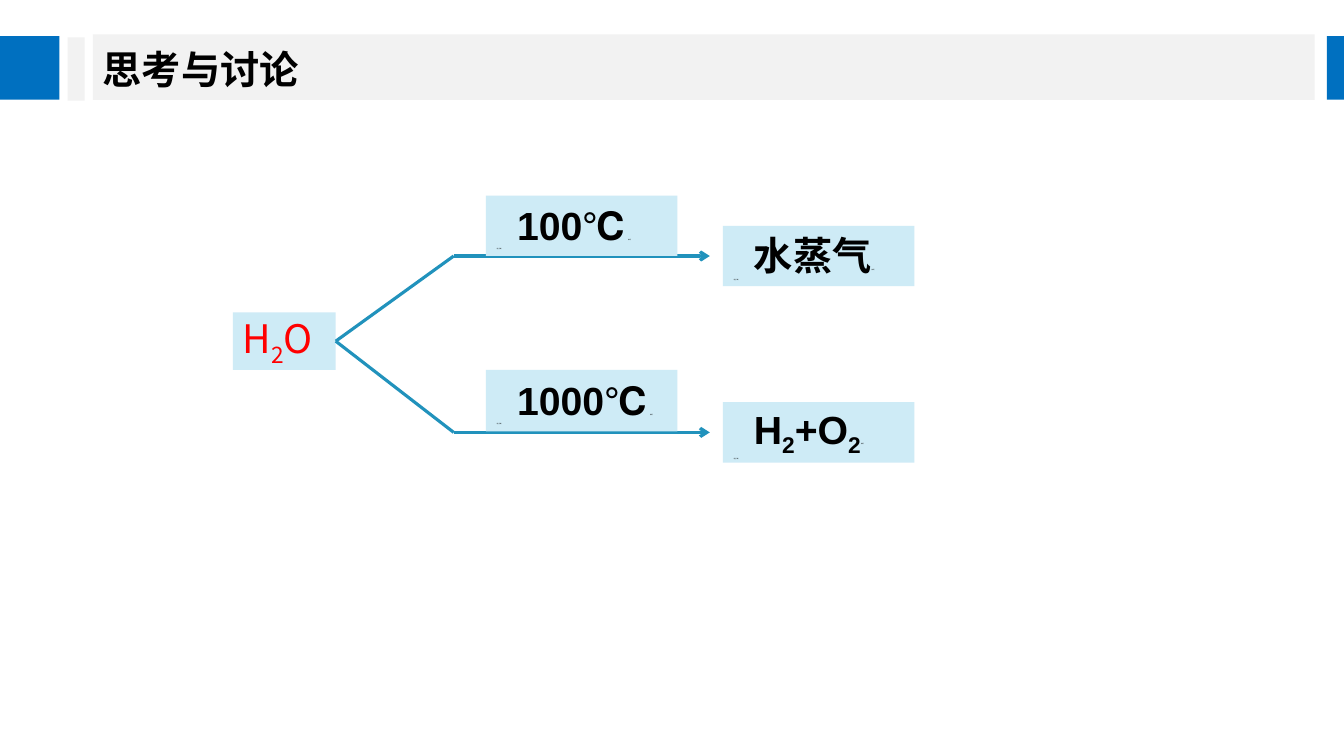
from pptx import Presentation
from pptx import util as u
from pptx.dml.color import RGBColor
from pptx.enum import shapes, text
from pptx.oxml import ns
from lxml import etree

COLORS = {"band": "F2F2F2", "accent": "0070C0", "box": "CEEBF6",
          "arrow": "2192BC", "ink": "000000", "formula": "FF0000"}
CJK = "Noto Sans CJK SC"
MAIN = {"size": u.Pt(28), "bold": True, "name": "Arial"}
CHINESE = {**MAIN, "name": CJK}
TITLE = {**MAIN, "name": "Times New Roman"}
FORMULA = {"size": u.Pt(28), "bold": False, "name": CJK}
TINY = {"size": u.Pt(1), "bold": False, "name": "Times New Roman"}


def color(name):
    return RGBColor.from_string(COLORS[name])


def add_run(paragraph, wording, style, ink="ink", subscript=False):
    run = paragraph.add_run()
    run.text = wording
    for attribute, value in style.items():
        setattr(run.font, attribute, value)
    run.font.color.rgb = color(ink)
    properties = run.font._element
    etree.SubElement(properties, ns.qn("a:ea")).set("typeface", CJK)
    if subscript:
        properties.set("baseline", "-25000")


def add_formula(paragraph, wording, style, ink="ink"):
    for index, part in enumerate(wording.split("_")):
        if index:
            add_run(paragraph, part[0], style, ink, True)
            part = part[1:]
        if part:
            add_run(paragraph, part, style, ink)


def add_box(slide, place, fill):
    shape = slide.shapes.add_shape(shapes.MSO_SHAPE.RECTANGLE, *map(u.Inches, place))
    shape.shadow.inherit = False
    shape.fill.solid()
    shape.fill.fore_color.rgb = color(fill)
    shape.line.fill.background()
    shape.text_frame.word_wrap = True
    shape.text_frame.vertical_anchor = text.MSO_ANCHOR.MIDDLE
    shape.text_frame.paragraphs[0].alignment = text.PP_ALIGN.LEFT
    return shape


def add_label(slide, place, wording, style):
    frame = add_box(slide, place, "box").text_frame
    first = frame.paragraphs[0]
    first._p.get_or_add_pPr().set("indent", str(u.Inches(0.21)))
    add_formula(first, wording, style)
    add_run(first, " 微观", TINY)
    second = frame.add_paragraph()
    second.alignment = text.PP_ALIGN.LEFT
    add_run(second, "（粒子数）", TINY)


def add_line(slide, start, end, source=None, arrow=False):
    line = slide.shapes.add_connector(shapes.MSO_CONNECTOR.STRAIGHT,
                                      *map(u.Inches, start + end))
    line.line.color.rgb = color("arrow")
    line.line.width = u.Pt(2.25)
    if source is not None:
        line.begin_connect(source, 3)
    if arrow:
        etree.SubElement(line.line._get_or_add_ln(), ns.qn("a:tailEnd")).set("type", "arrow")
    etree.SubElement(line._element.spPr, ns.qn("a:effectLst"))


def add_title(slide, wording):
    title = slide.shapes.title
    place = {"left": 0.92, "top": 0.17, "width": 6.95, "height": 0.81}
    for attribute, value in place.items():
        setattr(title, attribute, u.Inches(value))
    slide.shapes._spTree.append(title._element)
    frame = title.text_frame
    frame.vertical_anchor = text.MSO_ANCHOR.TOP
    frame.auto_size = text.MSO_AUTO_SIZE.NONE
    paragraph = frame.paragraphs[0]
    paragraph.alignment = text.PP_ALIGN.LEFT
    paragraph.line_spacing = 1.5
    add_run(paragraph, wording, TITLE)


def main():
    presentation = Presentation()
    presentation.slide_width = u.Inches(13.33)
    presentation.slide_height = u.Inches(7.5)
    slide = presentation.slides.add_slide(presentation.slide_layouts[5])

    add_box(slide, (0.92, 0.34, 12.12, 0.65), "band")
    add_title(slide, "思考与讨论")
    add_box(slide, (0, 0.36, 0.59, 0.63), "accent")
    add_box(slide, (0.67, 0.37, 0.17, 0.63), "band")
    add_box(slide, (13.16, 0.36, 0.17, 0.63), "accent")

    water = add_box(slide, (2.31, 3.1, 1.02, 0.57), "box")
    add_formula(water.text_frame.paragraphs[0], "H_2O", FORMULA, "formula")

    branches = [
        (2.54, (4.82, 1.94, 1.9, 0.6), "100℃", "水蒸气", CHINESE),
        (4.29, (4.82, 3.67, 1.9, 0.61), "1000℃", "H_2+O_2", MAIN),
    ]
    for level, place, condition, product, style in branches:
        add_line(slide, (3.33, 3.39), (4.5, level), source=water)
        add_line(slide, (4.5, level), (7.04, level), arrow=True)
        add_label(slide, place, condition, MAIN)
        add_label(slide, (7.17, level - 0.3, 1.9, 0.6), product, style)

    presentation.save("out.pptx")


if __name__ == "__main__":
    main()
